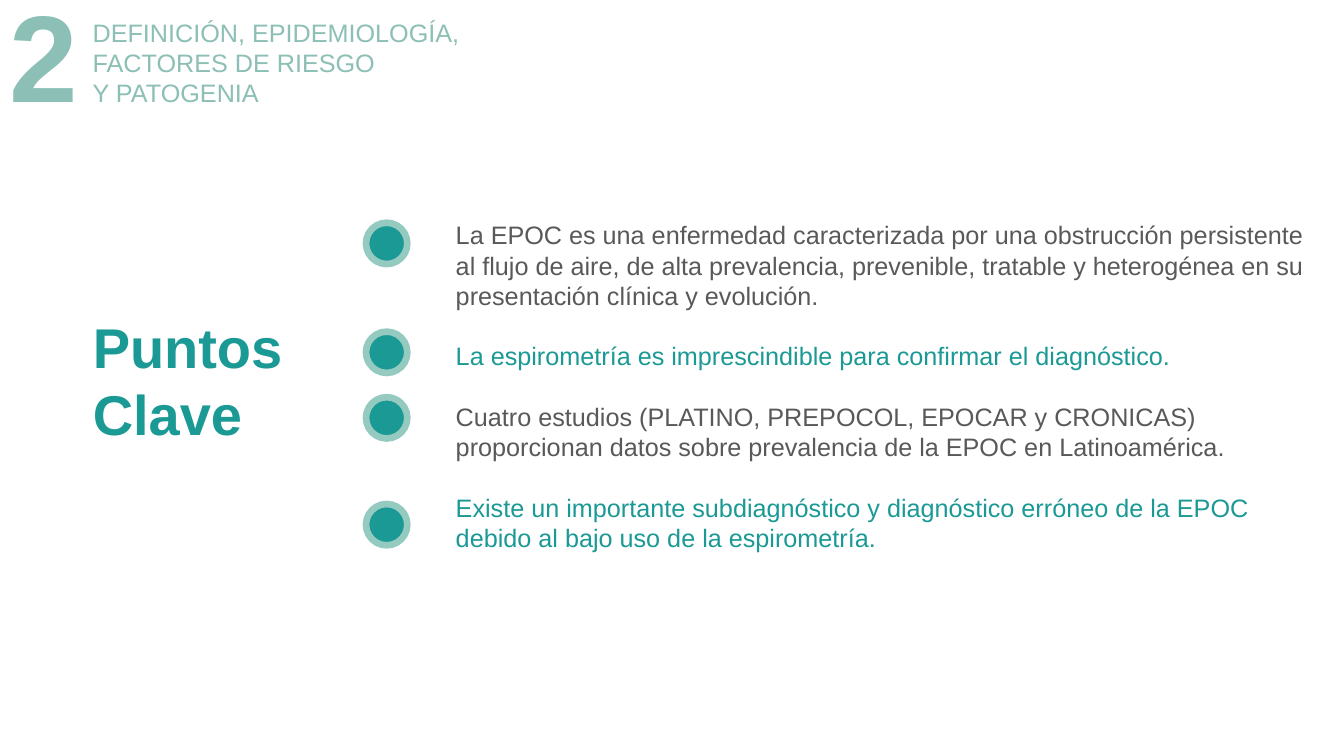
import pptx
import pptx.dml.color
import pptx.enum.shapes
import pptx.enum.text
import pptx.util

Inches = pptx.util.Inches
Pt = pptx.util.Pt
RGBColor = pptx.dml.color.RGBColor

TEAL = RGBColor(0x1B, 0x99, 0x95)
PALE_TEAL = RGBColor(0x8C, 0xBF, 0xB5)
RING_TEAL = RGBColor(0x95, 0xCA, 0xC0)
GREY = RGBColor(0x59, 0x59, 0x59)

SECTION_LINES = ["DEFINICIÓN, EPIDEMIOLOGÍA,", "FACTORES DE RIESGO", "Y PATOGENIA"]
KEY_POINTS = [
    "La EPOC es una enfermedad caracterizada por una obstrucción persistente al flujo de aire, "
    "de alta prevalencia, prevenible, tratable y heterogénea en su presentación clínica y evolución.",
    "La espirometría es imprescindible para confirmar el diagnóstico.",
    "Cuatro estudios (PLATINO, PREPOCOL, EPOCAR y CRONICAS) proporcionan datos sobre "
    "prevalencia de la EPOC en Latinoamérica.",
    "Existe un importante subdiagnóstico y diagnóstico erróneo de la EPOC debido al bajo uso "
    "de la espirometría.",
]
MARKER_TOPS = [2.21, 3.29, 3.94, 5]
MARKER_LEFT = 3.63
MARKER_SIZE = 0.41


def write_text(frame, lines, size, colors, bold=False, wrap=True, gap=0):
    """Fill a frame with one paragraph per line, cycling through the colours."""
    frame.auto_size = pptx.enum.text.MSO_AUTO_SIZE.NONE
    frame.word_wrap = wrap
    frame.vertical_anchor = pptx.enum.text.MSO_ANCHOR.TOP
    for index, line in enumerate(lines):
        paragraph = frame.add_paragraph() if index else frame.paragraphs[0]
        paragraph.alignment = pptx.enum.text.PP_ALIGN.LEFT
        paragraph.space_before = Pt(gap if index else 0)
        run = paragraph.add_run()
        run.text = line
        run.font.name = "Arial"
        run.font.size = Pt(size)
        run.font.bold = bold
        run.font.color.rgb = colors[index % len(colors)]


def place(placeholder, left, top, width, height):
    placeholder.left, placeholder.top = Inches(left), Inches(top)
    placeholder.width, placeholder.height = Inches(width), Inches(height)


def remove_bullets(frame):
    for paragraph in frame.paragraphs:
        properties = paragraph._p.get_or_add_pPr()
        properties.set("marL", "0")
        properties.set("indent", "0")
        properties.append(pptx.oxml.xmlchemy.OxmlElement("a:buNone"))


def add_label(slide, left, top, width, height, lines, **text_format):
    label = slide.shapes.add_textbox(Inches(left), Inches(top), Inches(width), Inches(height))
    write_text(label.text_frame, lines, **text_format)


def add_marker(slide, top):
    marker = slide.shapes.add_shape(
        pptx.enum.shapes.MSO_SHAPE.OVAL,
        Inches(MARKER_LEFT), Inches(top), Inches(MARKER_SIZE), Inches(MARKER_SIZE))
    marker.shadow.inherit = False
    marker.fill.solid()
    marker.fill.fore_color.rgb = TEAL
    marker.line.color.rgb = RING_TEAL
    marker.line.width = Pt(4.75)


def main():
    presentation = pptx.Presentation()
    presentation.slide_width = Inches(13.33)
    presentation.slide_height = Inches(7.5)
    slide = presentation.slides.add_slide(presentation.slide_layouts[1])

    add_label(slide, 0, -0.25, 0.89, 1.58, ["2"],
              size=88, colors=[PALE_TEAL], bold=True, wrap=False)
    add_label(slide, 0.82, 0.12, 3.88, 1.01, SECTION_LINES,
              size=18, colors=[PALE_TEAL], wrap=False)

    heading = slide.shapes.title
    place(heading, 0.82, 3.05, 2.6, 1.45)
    write_text(heading.text_frame, ["Puntos", "Clave"], size=40, colors=[TEAL], bold=True)

    key_points = slide.placeholders[1]
    place(key_points, 4.42, 2.13, 8.63, 3.43)
    write_text(key_points.text_frame, KEY_POINTS, size=18, colors=[GREY, TEAL], gap=21.6)
    remove_bullets(key_points.text_frame)

    for top in MARKER_TOPS:
        add_marker(slide, top)

    presentation.save("out.pptx")


if __name__ == "__main__":
    main()
